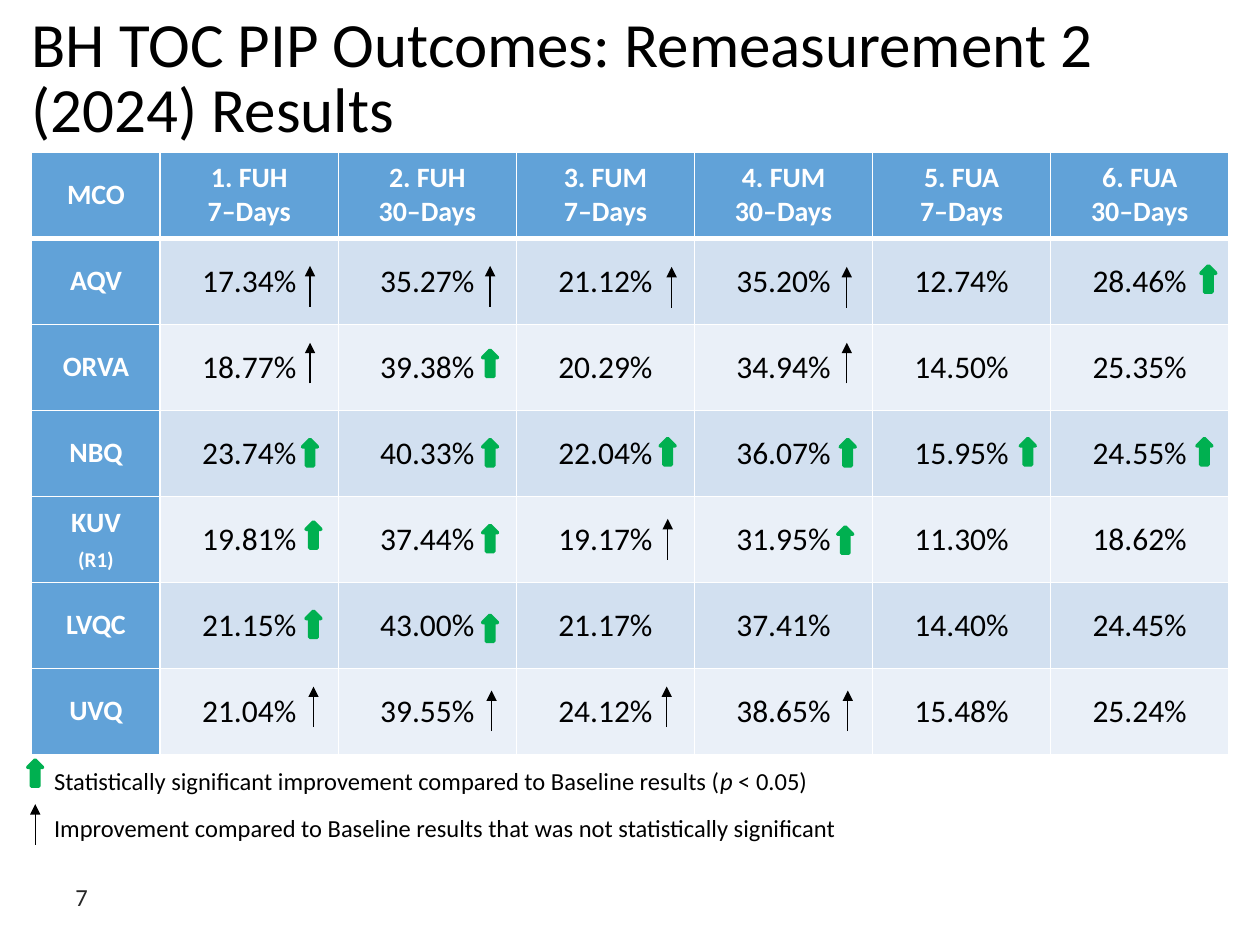
"""Builds the remeasurement results slide with its table, arrows and key."""
from lxml import etree
from pptx import Presentation
from pptx.dml.color import RGBColor
from pptx.enum.shapes import MSO_CONNECTOR, MSO_SHAPE
from pptx.enum.text import MSO_ANCHOR, MSO_AUTO_SIZE, PP_ALIGN
from pptx.oxml.ns import qn
from pptx.util import Cm, Pt

LEFT, MID = PP_ALIGN.LEFT, PP_ALIGN.CENTER
CENTRE, FIXED = MSO_ANCHOR.MIDDLE, MSO_AUTO_SIZE.NONE
UP, LINE = MSO_SHAPE.UP_ARROW, MSO_CONNECTOR.STRAIGHT

BLACK = RGBColor(0x00, 0x00, 0x00)
WHITE = RGBColor(0xFF, 0xFF, 0xFF)
GREY = RGBColor(0x26, 0x26, 0x26)
GREEN = RGBColor(0x00, 0xB0, 0x50)
BLUE = RGBColor(0x61, 0xA2, 0xD8)
BANDS = (RGBColor(0xD2, 0xE0, 0xF0), RGBColor(0xEA, 0xF0, 0xF8))

HEAD = ["MCO"] + [
    f"{num}. {name}\n{days}–Days"
    for num, name, days in (
        (1, "FUH", 7), (2, "FUH", 30), (3, "FUM", 7),
        (4, "FUM", 30), (5, "FUA", 7), (6, "FUA", 30),
    )
]
RATES = {
    "AQV": (17.34, 35.27, 21.12, 35.20, 12.74, 28.46),
    "ORVA": (18.77, 39.38, 20.29, 34.94, 14.50, 25.35),
    "NBQ": (23.74, 40.33, 22.04, 36.07, 15.95, 24.55),
    "KUV\n(R1)": (19.81, 37.44, 19.17, 31.95, 11.30, 18.62),
    "LVQC": (21.15, 43.00, 21.17, 37.41, 14.40, 24.45),
    "UVQ": (21.04, 39.55, 24.12, 38.65, 15.48, 25.24),
}
BOLD = (
    (24.21, 5.36),
    (9.73, 7.06),
    (6.1, 8.86), (9.73, 8.86), (13.31, 8.84),
    (16.94, 8.86), (20.57, 8.84), (24.13, 8.84),
    (6.17, 10.52), (9.73, 10.59), (16.89, 10.62),
    (6.17, 12.32), (9.73, 12.4),
    (0.56, 15.32),
)
THIN = (
    (6.25, 5.36), (9.88, 5.36), (13.54, 5.38), (17.07, 5.38),
    (6.25, 6.91), (17.07, 6.91),
    (13.46, 10.46),
    (6.32, 13.84), (9.91, 13.92), (13.44, 13.84), (17.09, 13.92),
    (0.71, 16.21),
)
KEY = (
    (("Statistically significant improvement compared to Baseline results (", False),
     ("p", True), (" < 0.05)", False)),
    (("Improvement compared to Baseline results that was not statistically significant",
      False),),
)


def put(item, **vals):
    """Set each named value on the item."""
    for name, val in vals.items():
        setattr(item, name, val)


class Page:
    """Holds the text style and the current slide."""

    def __init__(self, slide, face):
        """Keep the slide and the font name."""
        self.slide = slide
        self.shapes = slide.shapes
        self.face = face

    def style(self, font, size, color, **vals):
        """Format a font."""
        put(font, name=self.face, size=Pt(size), **vals)
        font.color.rgb = color

    def title(self, text, box):
        """Move, fill and format the title."""
        item = self.shapes.title
        put(item, **box)
        frame = item.text_frame
        put(frame, text=text, word_wrap=True, auto_size=FIXED,
            vertical_anchor=CENTRE, margin_left=0, margin_right=0)
        para = frame.paragraphs[0]
        put(para, alignment=LEFT, line_spacing=Pt(37))
        self.style(para.font, 36, BLACK)

    def text(self, rows, box, color, gap=0, **vals):
        """Add a text box of rows made of text and italic pairs."""
        frame = self.shapes.add_textbox(*box).text_frame
        put(frame, word_wrap=True, **vals)
        for num, row in enumerate(rows):
            para = frame.add_paragraph() if num else frame.paragraphs[0]
            if num:
                para.space_before = Pt(gap)
            for words, slant in row:
                run = para.add_run()
                run.text = words
                self.style(run.font, 14, color, italic=slant)

    def cell(self, cell, text, fill, sizes, color, bold, gap):
        """Fill and format one table cell."""
        put(cell, text=text, vertical_anchor=CENTRE, margin_left=Cm(0.18),
            margin_right=Cm(0.18), margin_top=0, margin_bottom=0)
        cell.fill.solid()
        cell.fill.fore_color.rgb = fill
        for num, (para, size) in enumerate(zip(cell.text_frame.paragraphs, sizes)):
            put(para, alignment=MID, space_before=Pt(gap if num else 0),
                space_after=Pt(gap))
            self.style(para.font, size, color, bold=bold)

    def rules(self, frame):
        """Draw white cell borders, thicker below the header."""
        for row, line in enumerate(frame.element.iter(qn("a:tr"))):
            thick = {0: "lnB", 1: "lnT"}.get(row)
            for props in line.iter(qn("a:tcPr")):
                for num, side in enumerate(("lnL", "lnR", "lnT", "lnB")):
                    edge = etree.Element(qn(f"a:{side}"))
                    edge.set("w", str(Pt(3 if side == thick else 1)))
                    fill = etree.SubElement(edge, qn("a:solidFill"))
                    etree.SubElement(fill, qn("a:srgbClr"), val=str(WHITE))
                    props.insert(num, edge)

    def table(self, head, rates, box, first):
        """Add the table of rates."""
        frame = self.shapes.add_table(len(rates) + 1, len(head), *box)
        grid = frame.table
        wide = (box[2] - first) // (len(head) - 1)
        for num, col in enumerate(grid.columns):
            col.width = wide if num else first
        for num, text in enumerate(head):
            self.cell(grid.cell(0, num), text, BLUE, (16, 16), WHITE, True, 0)
        for row, (name, vals) in enumerate(rates.items(), 1):
            self.cell(grid.cell(row, 0), name, BLUE, (16, 12), WHITE, True, 2)
            band = BANDS[(row - 1) % 2]
            for col, val in enumerate(vals, 1):
                self.cell(grid.cell(row, col), f"{val:.2f}%", band, (18,),
                          BLACK, False, 2)
        self.rules(frame)

    def block(self, left, top):
        """Add a green block arrow."""
        item = self.shapes.add_shape(UP, Cm(left), Cm(top), Cm(0.3), Cm(0.53))
        item.shadow.inherit = False
        item.fill.solid()
        item.fill.fore_color.rgb = GREEN
        item.line.color.rgb = GREEN
        item.line.width = Pt(2)

    def arrow(self, left, top):
        """Add a thin arrow that points up."""
        item = self.shapes.add_connector(
            LINE, Cm(left), Cm(top + 0.82), Cm(left), Cm(top))
        item.line.color.rgb = BLACK
        item.line.width = Pt(0.75)
        props = item.element.spPr
        etree.SubElement(props.find(qn("a:ln")), qn("a:tailEnd"), type="triangle")
        etree.SubElement(props, qn("a:effectLst"))


def main():
    """Build and save the slide."""
    deck = Presentation()
    put(deck, slide_width=Cm(25.4), slide_height=Cm(19.05))
    page = Page(deck.slides.add_slide(deck.slide_layouts[5]), "Calibri")
    page.title("BH TOC PIP Outcomes: Remeasurement 2 (2024) Results",
               {"left": Cm(0.64), "top": Cm(0.13),
                "width": Cm(24.13), "height": Cm(2.97)})
    page.table(HEAD, RATES, (Cm(0.64), Cm(3.07), Cm(24.13), Cm(12.14)), Cm(2.59))
    page.text(((("7", False),),), (Cm(1.27), Cm(17.35), Cm(2.11), Cm(1.47)),
              GREY, vertical_anchor=CENTRE)
    page.text(KEY, (Cm(0.84), Cm(15.32), Cm(21.56), Cm(1.8)), BLACK, gap=9.8)
    for spot in BOLD:
        page.block(*spot)
    for spot in THIN:
        page.arrow(*spot)
    deck.save("out.pptx")


if __name__ == "__main__":
    main()
